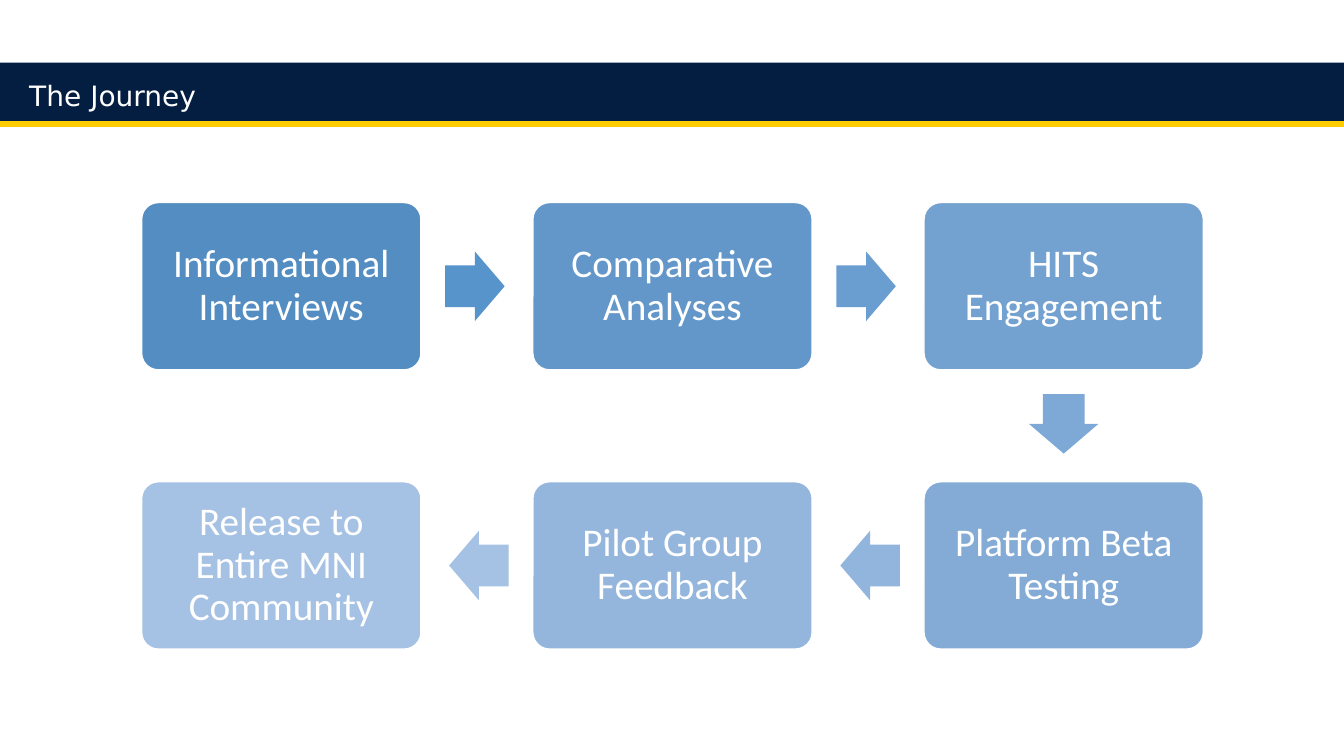
from dataclasses import dataclass
from math import atan2, degrees, hypot

from pptx import Presentation
from pptx import util as u
from pptx.dml.color import RGBColor
from pptx.enum import shapes, text

KIND = shapes.MSO_SHAPE


@dataclass(frozen=True)
class Theme:
    navy: str = "041E42"
    gold: str = "FFCC02"
    white: str = "FFFFFF"
    head: str = "DejaVu Sans"
    body: str = "Calibri"
    big: int = 28
    small: int = 20


class Deck:
    """Holds the theme and the slide being drawn."""

    def __init__(self, theme):
        self.theme = theme
        self.prs = Presentation()
        self.prs.slide_width = u.Inches(13.33)
        self.prs.slide_height = u.Inches(7.5)
        self.slide = self.prs.slides.add_slide(self.prs.slide_layouts[6])

    def shape(self, kind, area, fill, line=None, width=1, adj=()):
        item = self.slide.shapes.add_shape(kind, *map(u.Inches, area))
        item.shadow.inherit = False
        item.fill.solid()
        item.fill.fore_color.rgb = RGBColor.from_string(fill)
        if line:
            item.line.color.rgb = RGBColor.from_string(line)
            item.line.width = u.Pt(width)
        else:
            item.line.fill.background()
        for i, value in enumerate(adj):
            item.adjustments[i] = value
        return item

    def label(self, item, words, font, size, pads, form):
        """Fill a shape with one paragraph; pads are left, top, right, bottom."""
        frame = item.text_frame
        frame.word_wrap = True
        frame.vertical_anchor = text.MSO_ANCHOR.MIDDLE
        for side, pad in zip(("left", "top", "right", "bottom"), pads):
            setattr(frame, "margin_" + side, u.Inches(pad))
        para = frame.paragraphs[0]
        for key, value in form.items():
            setattr(para, key, value)
        run = para.add_run()
        run.text = words
        for key, value in {"name": font, "size": u.Pt(size)}.items():
            setattr(run.font, key, value)
        run.font.color.rgb = RGBColor.from_string(self.theme.white)

    def title(self, words):
        t = self.theme
        bar = self.shape(KIND.RECTANGLE, (0, 0.62, 13.33, 0.58), t.navy)
        form = {"alignment": text.PP_ALIGN.LEFT, "line_spacing": 1.2,
                "space_after": u.Pt(6)}
        self.label(bar, words, t.head, t.small, (0.29, 0.05, 0.1, 0.05), form)
        self.shape(KIND.RECTANGLE, (0, 1.21, 13.33, 0.05), t.gold, t.gold, 0.75)

    def step(self, words, mid, fill):
        t = self.theme
        wide, high = 2.77, 1.66
        area = (mid[0] - wide / 2, mid[1] - high / 2, wide, high)
        box = self.shape(KIND.ROUNDED_RECTANGLE, area, fill, t.white, adj=(0.1,))
        form = {"alignment": text.PP_ALIGN.CENTER, "line_spacing": 0.9}
        self.label(box, words, t.body, t.big, (0.12,) * 4, form)

    def arrow(self, start, end, fill):
        """Point from one step's centre to the next, just short of halfway."""
        wide, high, back = 0.59, 0.69, 0.02
        dx, dy = end[0] - start[0], end[1] - start[1]
        far = hypot(dx, dy)
        x = (start[0] + end[0]) / 2 - back * dx / far
        y = (start[1] + end[1]) / 2 - back * dy / far
        area = (x - wide / 2, y - high / 2, wide, high)
        item = self.shape(KIND.RIGHT_ARROW, area, fill, adj=(0.6, 0.5))
        item.rotation = degrees(atan2(dy, dx))


STEPS = [
    ("Informational Interviews", "538DC1"),
    ("Comparative Analyses", "6397C9"),
    ("HITS Engagement", "73A1D0"),
    ("Platform Beta Testing", "84ABD6"),
    ("Pilot Group Feedback", "94B6DD"),
    ("Release to Entire MNI Community", "A5C1E3"),
]
ARROWS = ["5794CB", "6A9ED1", "7EA9D7", "91B5DD", "A5C1E3"]


def place(i, cols=3):
    """Centre of step i; every second row runs right to left."""
    row, col = divmod(i, cols)
    if row % 2:
        col = cols - 1 - col
    return 2.79 + 3.88 * col, 2.84 + 2.77 * row


def main():
    deck = Deck(Theme())
    deck.title("The Journey")
    for i, (words, fill) in enumerate(STEPS):
        deck.step(words, place(i), fill)
    for i, fill in enumerate(ARROWS):
        deck.arrow(place(i), place(i + 1), fill)
    deck.prs.save("out.pptx")


if __name__ == "__main__":
    main()
